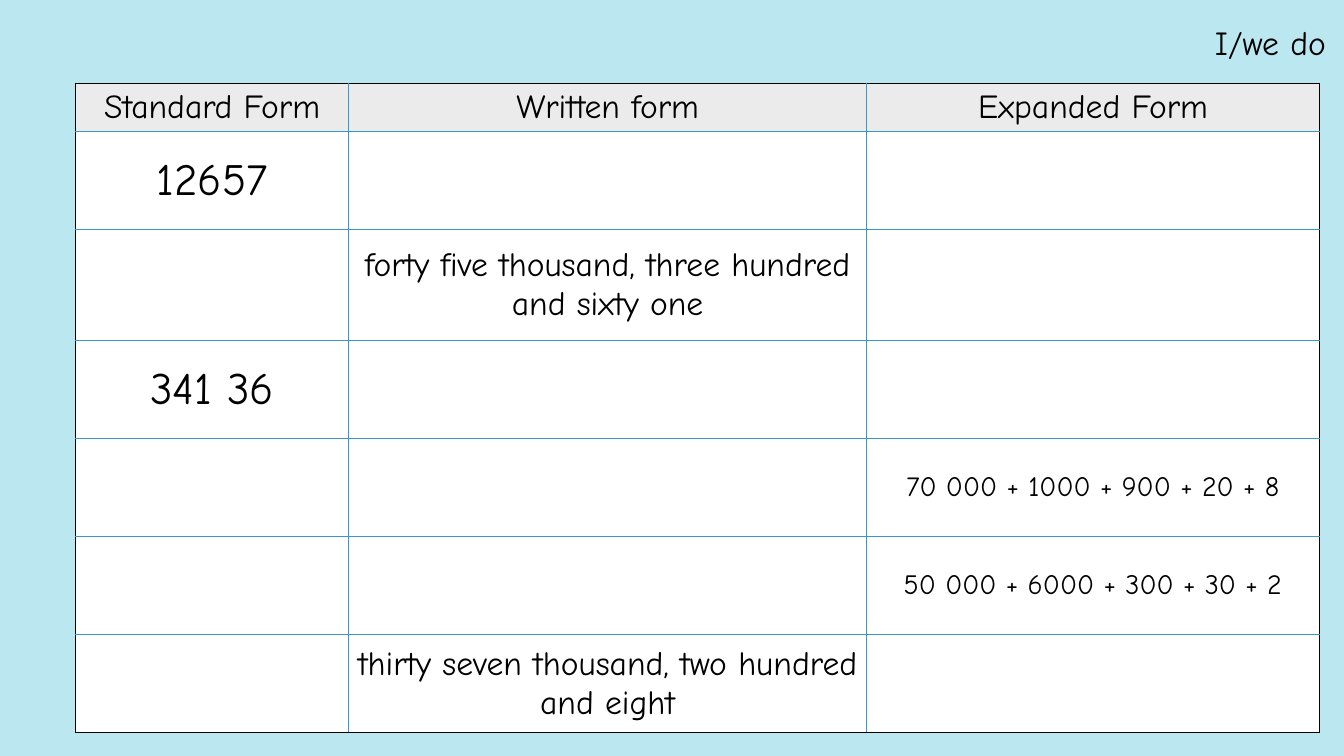
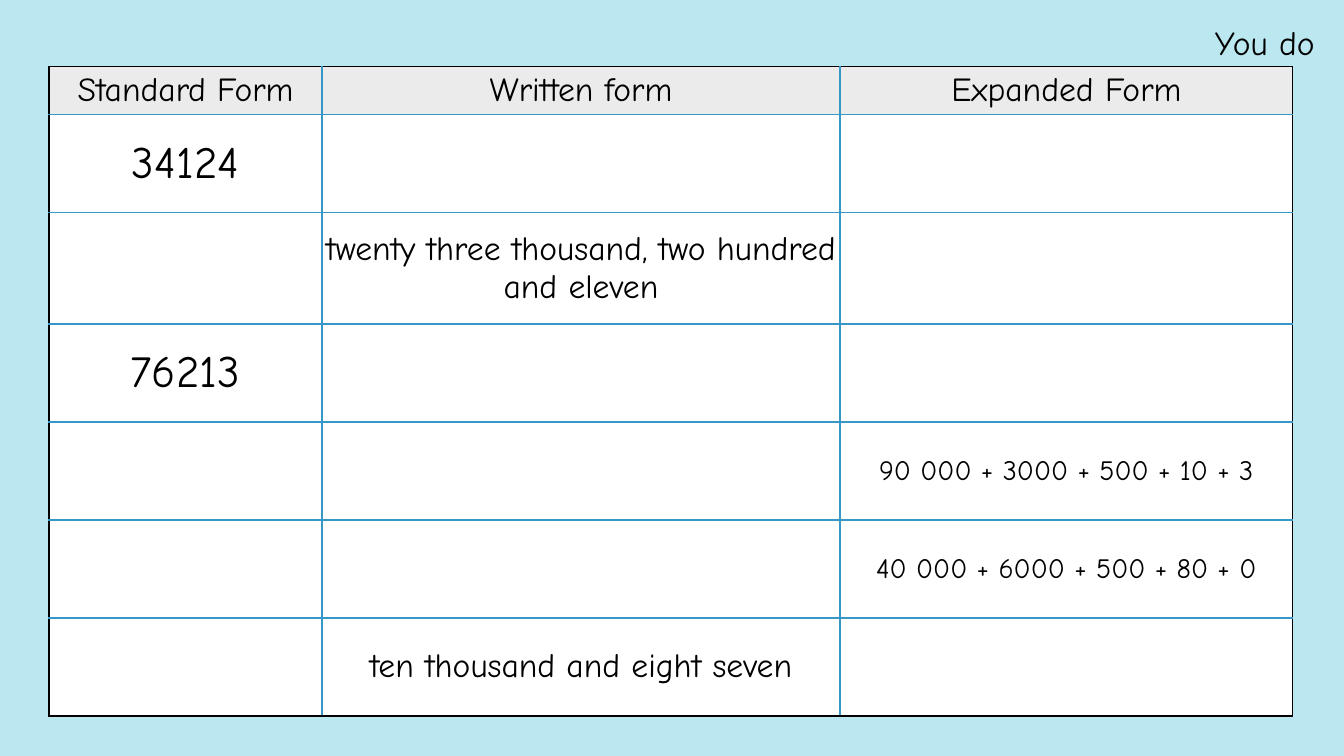
from lxml.etree import SubElement
from pptx import Presentation
from pptx.dml.color import RGBColor
from pptx.enum.text import MSO_ANCHOR, MSO_AUTO_SIZE, PP_ALIGN
from pptx.oxml.ns import qn
from pptx.util import Pt

FONT = "Comic Neue"
SKY, BLUE, GREY, WHITE, BLACK = "BAE7F0", "3797C6", "EBEBEB", "FFFFFF", "000000"
TITLE_BOX = (865, 13, 95, 34.5)
COLS = (195, 370, 323.5)
ROWS = (34.5, 70, 79.5, 70, 70, 70, 70)
HEADER = ("Standard Form", "Written form", "Expanded Form")
HEADER_SIZE = 24
BODY_SIZES = (32, 24, 20)
MARGINS = ("margin_left", "margin_right", "margin_top", "margin_bottom")
CELL_FORMAT = dict.fromkeys(MARGINS, Pt(2.5)) | {"vertical_anchor": MSO_ANCHOR.MIDDLE}
TITLE_FORMAT = dict.fromkeys(MARGINS, Pt(2.8)) | {
    "vertical_anchor": MSO_ANCHOR.MIDDLE,
    "word_wrap": True,
    "auto_size": MSO_AUTO_SIZE.NONE,
}

SLIDES = [
    ("I/we do", (54, 59.5), [
        ("12657", "", ""),
        ("", "forty five thousand, three hundred and sixty one", ""),
        ("341 36", "", ""),
        ("", "", "70 000 + 1000 + 900 + 20 + 8"),
        ("", "", "50 000 + 6000 + 300 + 30 + 2"),
        ("", "thirty seven thousand, two hundred and eight", ""),
    ]),
    ("You do", (35, 47.5), [
        ("34124", "", ""),
        ("", "twenty three thousand, two hundred and eleven", ""),
        ("76213", "", ""),
        ("", "", "90 000 + 3000 + 500 + 10 + 3"),
        ("", "", "40 000 + 6000 + 500 + 80 + 0"),
        ("", "ten thousand and eight seven", ""),
    ]),
]


def rgb(color):
    return RGBColor.from_string(color)


def apply(obj, values):
    for name, value in values.items():
        setattr(obj, name, value)


def write(p, text, size, align):
    p.alignment = align
    if text:
        r = p.add_run()
        r.text = text
        apply(r.font, {"name": FONT, "size": Pt(size), "bold": False})
        r.font.color.rgb = rgb(BLACK)


def add_borders(cell, colors):
    tcPr = cell._tc.get_or_add_tcPr()
    for side, color in colors.items():
        ln = SubElement(tcPr, qn(f"a:ln{side}"), w=str(Pt(1)))
        fill = SubElement(ln, qn("a:solidFill"))
        SubElement(fill, qn("a:srgbClr"), val=color)


def add_title(s, text, box):
    sp = s.shapes.title
    apply(sp, dict(zip(("left", "top", "width", "height"), map(Pt, box))))
    tf = sp.text_frame
    apply(tf, TITLE_FORMAT)
    write(tf.paragraphs[0], text, 24, PP_ALIGN.LEFT)


def add_number_table(s, left, top, body):
    rows = [HEADER, *body]
    frame = s.shapes.add_table(
        len(ROWS), len(COLS), Pt(left), Pt(top), Pt(sum(COLS)), Pt(sum(ROWS)))
    table = frame.table
    apply(table, {"first_row": False, "horz_banding": False})
    for col, width in zip(table.columns, COLS):
        col.width = Pt(width)
    for row, height in zip(table.rows, ROWS):
        row.height = Pt(height)
    for i, texts in enumerate(rows):
        for j, text in enumerate(texts):
            cell = table.cell(i, j)
            outer = {"L": j == 0, "R": j == len(COLS) - 1,
                     "T": i == 0, "B": i == len(ROWS) - 1}
            add_borders(cell, {side: BLACK if edge else BLUE
                               for side, edge in outer.items()})
            apply(cell, CELL_FORMAT)
            cell.fill.solid()
            cell.fill.fore_color.rgb = rgb(WHITE if i else GREY)
            size = BODY_SIZES[j] if i else HEADER_SIZE
            write(cell.text_frame.paragraphs[0], text, size, PP_ALIGN.CENTER)


def add_practice_slide(prs, title, origin, body):
    s = prs.slides.add_slide(prs.slide_layouts.get_by_name("Title Only"))
    add_title(s, title, TITLE_BOX)
    add_number_table(s, *origin, body)


def main():
    prs = Presentation()
    apply(prs, {"slide_width": Pt(960), "slide_height": Pt(540)})
    background = prs.slide_master.background.fill
    background.solid()
    background.fore_color.rgb = rgb(SKY)
    for title, origin, body in SLIDES:
        add_practice_slide(prs, title, origin, body)
    prs.save("out.pptx")


if __name__ == "__main__":
    main()
